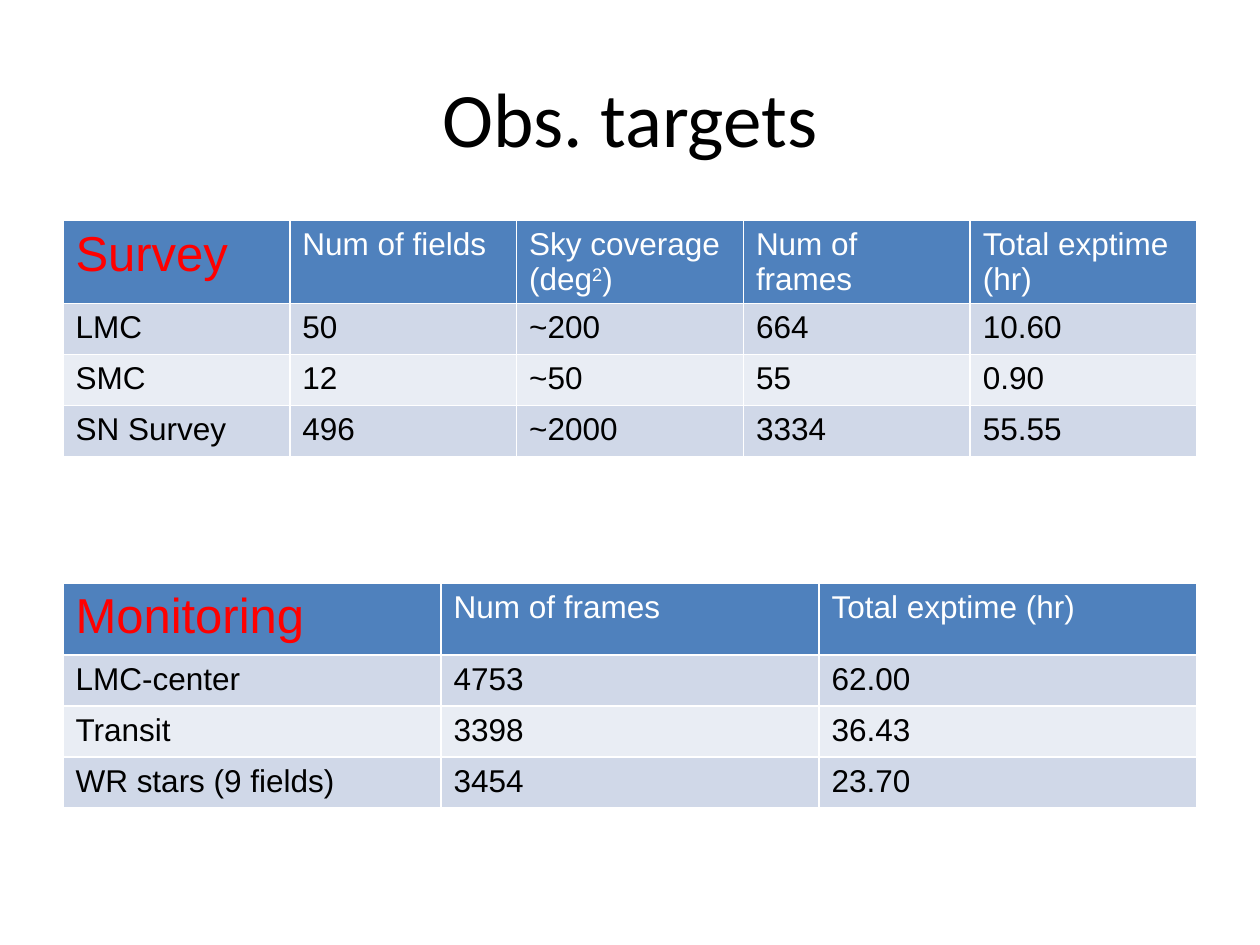
"""Build the observation targets slide with its survey and monitoring tables."""
from pptx import Presentation
from pptx.dml.color import RGBColor
from pptx.enum.text import MSO_ANCHOR, PP_ALIGN
from pptx.util import Inches, Pt

COLORS = {
    "black": "000000",
    "white": "FFFFFF",
    "red": "FF0000",
    "header": "4F81BD",
    "odd": "D0D8E8",
    "even": "E9EDF4",
}
LEFT, WIDTH, ROW_HEIGHT = 0.5, 9, 0.405

SURVEY = [
    ["Survey", "Num of fields", "Sky coverage\n(deg^2^)", "Num of frames", "Total exptime (hr)"],
    ["LMC", "50", "~200", "664", "10.60"],
    ["SMC", "12", "~50", "55", "0.90"],
    ["SN Survey", "496", "~2000", "3334", "55.55"],
]
MONITORING = [
    ["Monitoring", "Num of frames", "Total exptime (hr)"],
    ["LMC-center", "4753", "62.00"],
    ["Transit", "3398", "36.43"],
    ["WR stars (9 fields)", "3454", "23.70"],
]


class SlideBuilder:
    def __init__(self, slide):
        self.slide = slide

    def style(self, paragraph, size, color, name="Arial"):
        font = paragraph.font
        font.name, font.size, font.bold = name, Pt(size), False
        font.color.rgb = RGBColor.from_string(COLORS[color])

    def title(self, text):
        shape = self.slide.shapes.title
        shape.left, shape.top = Inches(LEFT), Inches(0.3)
        shape.width, shape.height = Inches(WIDTH), Inches(1.25)
        shape.text_frame.vertical_anchor = MSO_ANCHOR.MIDDLE
        paragraph = shape.text_frame.paragraphs[0]
        paragraph.text = text
        paragraph.alignment = PP_ALIGN.CENTER
        self.style(paragraph, 44, "black", "Calibri")

    def cell(self, cell, text, fill, size, color):
        cell.fill.solid()
        cell.fill.fore_color.rgb = RGBColor.from_string(COLORS[fill])
        frame = cell.text_frame
        for index, line in enumerate(text.split("\n")):
            paragraph = frame.add_paragraph() if index else frame.paragraphs[0]
            for position, part in enumerate(line.split("^")):
                run = paragraph.add_run()
                run.text = part
                if position % 2:
                    run.font._element.set("baseline", "30000")
            self.style(paragraph, size, color)

    def table(self, rows, top, header_height):
        height = header_height + ROW_HEIGHT * (len(rows) - 1)
        frame = self.slide.shapes.add_table(
            len(rows), len(rows[0]), Inches(LEFT), Inches(top), Inches(WIDTH), Inches(height))
        table = frame.table
        for row_index, values in enumerate(rows):
            is_header = row_index == 0
            table.rows[row_index].height = Inches(header_height if is_header else ROW_HEIGHT)
            fill = "header" if is_header else "odd" if row_index % 2 else "even"
            for column_index, text in enumerate(values):
                size, color = 18, "white" if is_header else "black"
                if is_header and column_index == 0:
                    size, color = 28, "red"
                self.cell(table.cell(row_index, column_index), text, fill, size, color)


def main():
    presentation = Presentation()
    presentation.slide_width, presentation.slide_height = Inches(10), Inches(7.5)
    builder = SlideBuilder(presentation.slides.add_slide(presentation.slide_layouts[5]))
    builder.title("Obs. targets")
    builder.table(SURVEY, top=1.75, header_height=0.66)
    builder.table(MONITORING, top=4.63, header_height=0.57)
    presentation.save("out.pptx")


if __name__ == "__main__":
    main()
